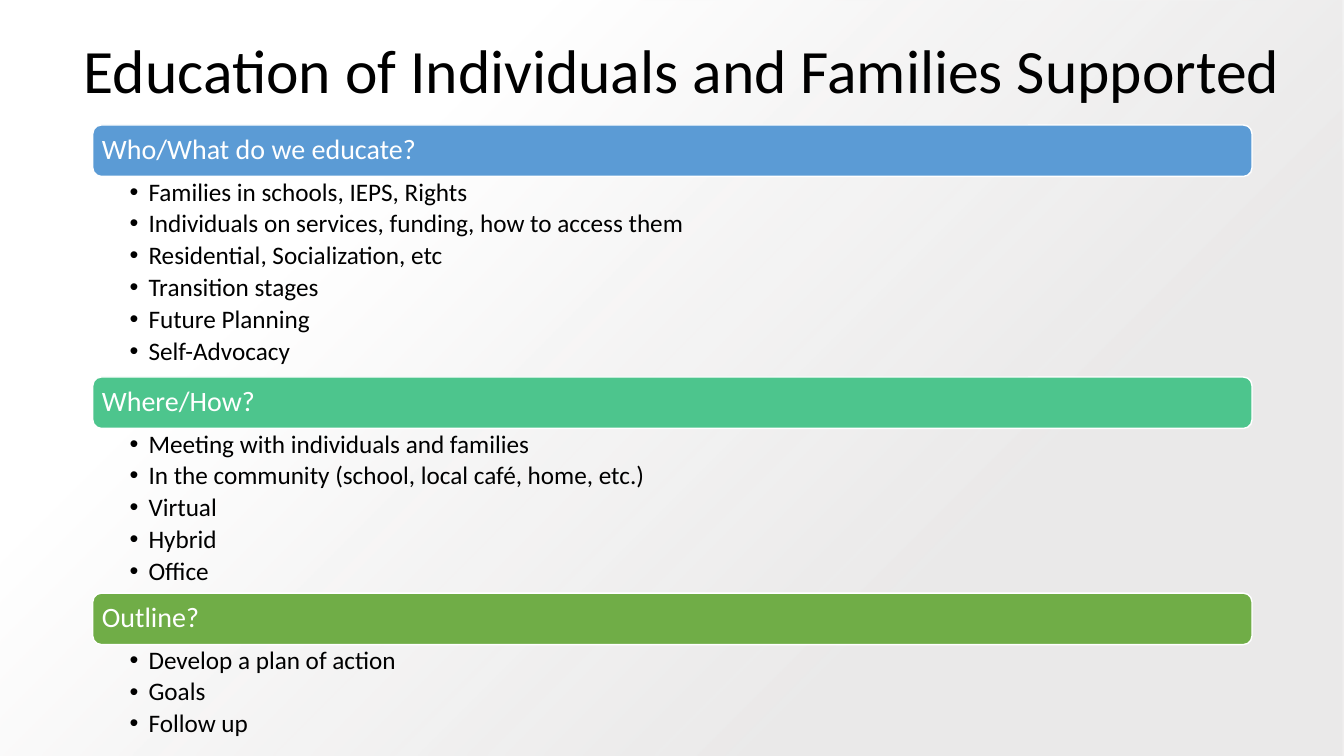
from dataclasses import dataclass

from lxml.etree import SubElement
from pptx import Presentation
from pptx.dml.color import RGBColor
from pptx.enum.shapes import MSO_SHAPE
from pptx.enum.text import MSO_ANCHOR, MSO_AUTO_SIZE, PP_ALIGN
from pptx.oxml import parse_xml
from pptx.oxml.ns import nsdecls, qn
from pptx.util import Pt


@dataclass(frozen=True)
class Theme:
    font: str = "Calibri"
    text: str = "000000"
    light: str = "FFFFFF"
    shade: str = "E7E6E6"
    blue: str = "5B9BD5"
    teal: str = "4DC58D"
    green: str = "70AD47"
    title_size: float = 44
    heading_size: float = 20
    list_size: float = 18


THEME = Theme()
SLIDE_W, SLIDE_H = 960, 540
BAR_H = 36.7

# heading, bar colour, list height, list items
SECTIONS = [
    ("Who/What do we educate?", THEME.blue, 143.3, [
        "Families in schools, IEPS, Rights",
        "Individuals on services, funding, how to access them",
        "Residential, Socialization, etc",
        "Transition stages",
        "Future Planning",
        "Self-Advocacy",
    ]),
    ("Where/How?", THEME.teal, 117.7, [
        "Meeting with individuals and families",
        "In the community (school, local café, home, etc.)",
        "Virtual",
        "Hybrid",
        "Office",
    ]),
    ("Outline?", THEME.green, 71.3, [
        "Develop a plan of action",
        "Goals",
        "Follow up",
    ]),
]


def place(sp, x, y, w, h):
    sp.left, sp.top, sp.width, sp.height = Pt(x), Pt(y), Pt(w), Pt(h)


def set_frame(tf, anchor, left, top, right, bottom):
    tf.word_wrap = True
    tf.auto_size = MSO_AUTO_SIZE.NONE
    tf.vertical_anchor = anchor
    tf.margin_left, tf.margin_top = Pt(left), Pt(top)
    tf.margin_right, tf.margin_bottom = Pt(right), Pt(bottom)


def add_text(p, text, size, color, align=PP_ALIGN.LEFT, after=0):
    p.alignment = align
    p.line_spacing = 0.9
    p.space_before, p.space_after = Pt(0), Pt(after)
    r = p.add_run()
    r.text = text
    r.font.name, r.font.size, r.font.bold = THEME.font, Pt(size), False
    r.font.color.rgb = RGBColor.from_string(color)


def add_bullet(p):
    pPr = p._p.get_or_add_pPr()
    pPr.set("marL", str(Pt(13.5)))
    pPr.set("indent", str(Pt(-13.5)))
    SubElement(pPr, qn("a:buFont"), typeface="Arial")
    SubElement(pPr, qn("a:buChar"), char="•")


def add_backdrop(s, x, y, w, h):
    """Fill the box with a soft radial shade from the bottom right, behind all else."""
    sp = s.shapes.add_shape(MSO_SHAPE.RECTANGLE, Pt(x), Pt(y), Pt(w), Pt(h))
    sp.shadow.inherit = False
    sp.line.fill.background()
    sp.fill.solid()
    solid = sp._element.spPr.find(qn("a:solidFill"))
    solid.getparent().replace(solid, parse_xml(
        f'<a:gradFill {nsdecls("a")} rotWithShape="1"><a:gsLst>'
        f'<a:gs pos="28000"><a:srgbClr val="{THEME.shade}"><a:alpha val="84000"/></a:srgbClr></a:gs>'
        f'<a:gs pos="74000"><a:srgbClr val="{THEME.light}"/></a:gs></a:gsLst>'
        '<a:path path="circle"><a:fillToRect l="100000" t="100000"/></a:path></a:gradFill>'))
    s.shapes._spTree.insert(2, sp._element)


def fill_title(sp, text, x, y, w, h):
    place(sp, x, y, w, h)
    set_frame(sp.text_frame, MSO_ANCHOR.MIDDLE, 7.2, 3.6, 7.2, 3.6)
    add_text(sp.text_frame.paragraphs[0], text, THEME.title_size, THEME.text, PP_ALIGN.CENTER)


def add_heading_bar(s, text, color, x, y, w, h):
    sp = s.shapes.add_shape(MSO_SHAPE.ROUNDED_RECTANGLE, Pt(x), Pt(y), Pt(w), Pt(h))
    sp.shadow.inherit = False
    sp.fill.solid()
    sp.fill.fore_color.rgb = RGBColor.from_string(color)
    sp.line.color.rgb = RGBColor.from_string(THEME.light)
    sp.line.width = Pt(1)
    set_frame(sp.text_frame, MSO_ANCHOR.MIDDLE, 4.7, 5.8, 4.7, 5.8)
    add_text(sp.text_frame.paragraphs[0], text, THEME.heading_size, THEME.light)


def fill_list(sp, items, x, y, w, h):
    place(sp, x, y, w, h)
    tf = sp.text_frame
    set_frame(tf, MSO_ANCHOR.TOP, 26.3, 2, 10, 2)
    for i, item in enumerate(items):
        p = tf.add_paragraph() if i else tf.paragraphs[0]
        p.level = 1
        add_text(p, item, THEME.list_size, THEME.text, after=3.3)
        add_bullet(p)


def build_sections(s, bodies, x, y, w):
    """Stack the heading bars and their lists downwards from y."""
    for body, (heading, color, list_h, items) in zip(bodies, SECTIONS):
        add_heading_bar(s, heading, color, x, y, w, BAR_H)
        fill_list(body, items, x, y + BAR_H, w, list_h)
        y += BAR_H + list_h


def main():
    prs = Presentation()
    prs.slide_width, prs.slide_height = Pt(SLIDE_W), Pt(SLIDE_H)
    s = prs.slides.add_slide(prs.slide_layouts.get_by_name("Comparison"))
    title, *bodies = s.placeholders
    add_backdrop(s, 0, 0, SLIDE_W, SLIDE_H)
    fill_title(title, "Education of Individuals and Families Supported", 45.4, 0, 884, 104.4)
    build_sections(s, bodies, 66.3, 89.3, 828)
    for unused in bodies[len(SECTIONS):]:
        unused._element.getparent().remove(unused._element)
    prs.save("out.pptx")


if __name__ == "__main__":
    main()
